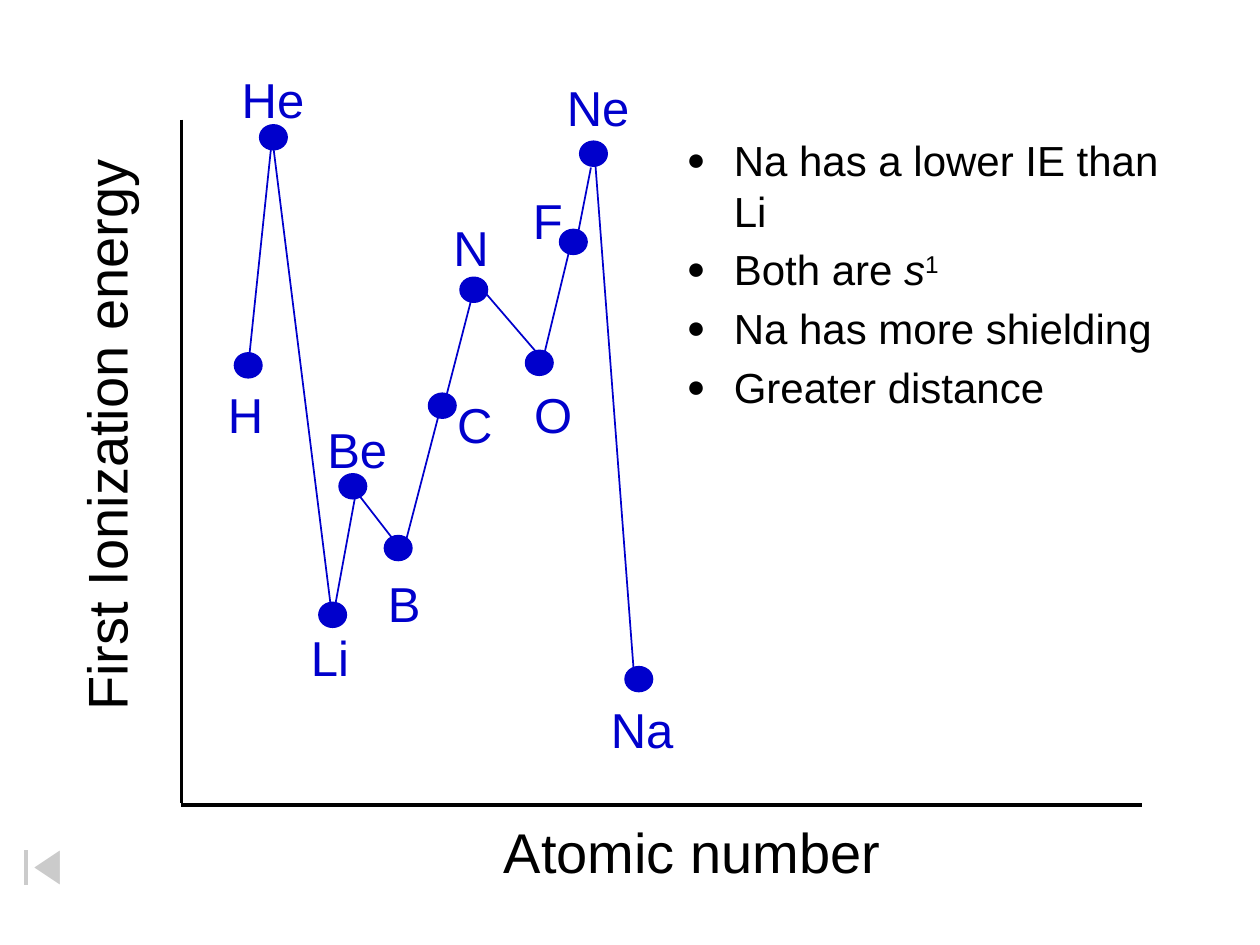
"""Draw the first ionization energy trend from H to Na with notes on Na versus Li."""
from typing import NamedTuple

import pptx
import pptx.dml.color
import pptx.enum.shapes
import pptx.enum.text
import pptx.oxml
import pptx.oxml.ns
import pptx.util

COLUMNS, ROWS = 100, 75
BLACK, BLUE, WHITE = "000000", "0000CC", "FFFFFF"
FONT = "Arial"
DOT_WIDTH, DOT_HEIGHT = 2.2, 2
LABEL_HEIGHT, TITLE_HEIGHT = 5.7, 6.3
SHAPE = pptx.enum.shapes.MSO_SHAPE


class Element(NamedTuple):
    """One element: its dot's corner and its label's corner and width, in grid units."""
    symbol: str
    dot: tuple[float, float]
    label: tuple[float, float]
    label_width: float


class Segment(NamedTuple):
    """A straight line between two grid points."""
    start: tuple[float, float]
    end: tuple[float, float]


class Run(NamedTuple):
    """A piece of text with its own style."""
    text: str
    italic: bool = False
    superscript: bool = False


ELEMENTS = [
    Element("H", (18.6, 28), (17.1, 30), 3.8),
    Element("He", (20.6, 9.9), (18.2, 5), 7.3),
    Element("Li", (25.3, 47.8), (23.7, 49.3), 7.3),
    Element("Be", (26.9, 37.6), (25, 32.8), 9.4),
    Element("B", (30.5, 42.5), (29.8, 45), 9.4),
    Element("C", (34, 31.2), (35.3, 30.8), 6.1),
    Element("N", (36.5, 22), (35, 16.8), 6.1),
    Element("O", (41.7, 27.8), (41.4, 30), 6.1),
    Element("F", (44.4, 18.2), (41.3, 14.6), 6.1),
    Element("Ne", (46, 11.2), (44, 5.7), 7.3),
    Element("Na", (49.6, 52.9), (47.5, 55), 9.4),
]
AXES = [
    Segment((14.4, 9.5), (14.4, 63.7)),
    Segment((90.6, 63.9), (14.4, 63.9)),
]
TREND = [
    Segment((19.7, 29.1), (21.6, 10.9)),
    Segment((21.6, 10.9), (26.3, 48.5)),
    Segment((26.5, 48.6), (28.3, 38.8)),
    Segment((28.1, 38.8), (31.2, 42.8)),
    Segment((32.2, 43), (34.8, 33)),
    Segment((35.2, 32.3), (37.5, 23.4)),
    Segment((38.4, 23.1), (42.7, 28.1)),
    Segment((43, 28.9), (45.3, 19.4)),
    Segment((45.8, 18.9), (46.9, 13.3)),
    Segment((47.2, 12.3), (50.3, 53.3)),
]
NOTES = [
    [Run("Na has a lower IE than Li")],
    [Run("Both are "), Run("s", italic=True), Run("1", superscript=True)],
    [Run("Na has more shielding")],
    [Run("Greater distance")],
]

deck = pptx.Presentation()
deck.slide_width, deck.slide_height = pptx.util.Inches(10), pptx.util.Inches(7.5)
slide = deck.slides.add_slide(deck.slide_layouts[6])


def across(columns: float) -> int:
    """Turn grid columns into a length."""
    return round(deck.slide_width * columns / COLUMNS)


def down(rows: float) -> int:
    """Turn grid rows into a length."""
    return round(deck.slide_height * rows / ROWS)


def color(value: str) -> pptx.dml.color.RGBColor:
    """Turn a hex string into a colour."""
    return pptx.dml.color.RGBColor.from_string(value)


def add_xml(parent, tag: str, **attributes: str):
    """Append a DrawingML child with the given attributes."""
    child = pptx.oxml.parse_xml(f"<a:{tag} {pptx.oxml.ns.nsdecls('a')}/>")
    for name, value in attributes.items():
        child.set(name, value)
    parent.append(child)
    return child


def draw_segment(segment: Segment, stroke: str, weight: float) -> None:
    """Draw a straight line without a shadow."""
    line = slide.shapes.add_connector(
        pptx.enum.shapes.MSO_CONNECTOR.STRAIGHT,
        across(segment.start[0]), down(segment.start[1]),
        across(segment.end[0]), down(segment.end[1]))
    line.line.color.rgb = color(stroke)
    line.line.width = pptx.util.Pt(weight)
    add_xml(line._element.spPr, "effectLst")


def draw_shape(preset, left: float, top: float, width: float, height: float, paint: str):
    """Draw a preset shape with one colour for fill and outline."""
    shape = slide.shapes.add_shape(preset, across(left), down(top), across(width), down(height))
    shape.shadow.inherit = False
    shape.fill.solid()
    shape.fill.fore_color.rgb = color(paint)
    shape.line.color.rgb = color(paint)
    shape.line.width = pptx.util.Pt(0.75)
    return shape


def write_paragraph(paragraph, runs: list[Run], size: float, ink: str, before: int) -> None:
    """Fill a paragraph run by run, with space before it in percent."""
    spacing = add_xml(paragraph._p.get_or_add_pPr(), "spcBef")
    add_xml(spacing, "spcPct", val=str(before * 1000))
    for part in runs:
        run = paragraph.add_run()
        run.text = part.text
        run.font.name = FONT
        run.font.size = pptx.util.Pt(size)
        run.font.color.rgb = color(ink)
        if part.italic:
            run.font.italic = True
        if part.superscript:
            run.font._element.set("baseline", "30000")


def draw_text(shapes, text: str, left: float, top: float, width: float, height: float,
              size: float, ink: str):
    """Write one line in a text box that grows with its text."""
    box = shapes.add_textbox(across(left), down(top), across(width), down(height))
    box.text_frame.word_wrap = True
    box.text_frame.auto_size = pptx.enum.text.MSO_AUTO_SIZE.SHAPE_TO_FIT_TEXT
    write_paragraph(box.text_frame.paragraphs[0], [Run(text)], size, ink, 50)
    return box


def draw_notes(notes: list[list[Run]]) -> None:
    """Write the bulleted notes beside the trend."""
    box = slide.shapes.add_textbox(across(53.5), down(10.2), across(42.2), down(56.7))
    frame = box.text_frame
    frame.word_wrap = True
    for index, runs in enumerate(notes):
        paragraph = frame.add_paragraph() if index else frame.paragraphs[0]
        write_paragraph(paragraph, runs, 24, BLACK, 20)
        properties = paragraph._p.get_or_add_pPr()
        properties.set("marL", str(across(3.75)))
        properties.set("indent", str(-across(3.75)))
        add_xml(properties, "buSzPct", val="75000")
        add_xml(properties, "buFont", typeface=FONT)
        add_xml(properties, "buChar", char="●")


def main() -> None:
    """Build the slide and save it."""
    for axis in AXES:
        draw_segment(axis, BLACK, 2)
    energy_title = draw_text(slide.shapes, "First Ionization energy",
                             -14.7, 31.2, 46.1, TITLE_HEIGHT, 32, BLACK)
    energy_title.rotation = 270
    draw_text(slide.shapes, "Atomic number", 39, 64.4, 32.3, TITLE_HEIGHT, 32, BLACK)
    for segment in TREND:
        draw_segment(segment, BLUE, 1)
    for element in ELEMENTS:
        draw_shape(SHAPE.OVAL, *element.dot, DOT_WIDTH, DOT_HEIGHT, BLUE)
    draw_notes(NOTES)
    symbols = slide.shapes.add_group_shape()
    for element in ELEMENTS:
        draw_text(symbols.shapes, element.symbol, *element.label,
                  element.label_width, LABEL_HEIGHT, 28, BLUE)
    restart = draw_shape(SHAPE.ACTION_BUTTON_BEGINNING, 0, 66.9, 6.7, 3.9, WHITE)
    tint = restart._element.spPr.find(pptx.oxml.ns.qn("a:solidFill"))[0]
    add_xml(tint, "alpha", val="50000")
    deck.save("out.pptx")


if __name__ == "__main__":
    main()
